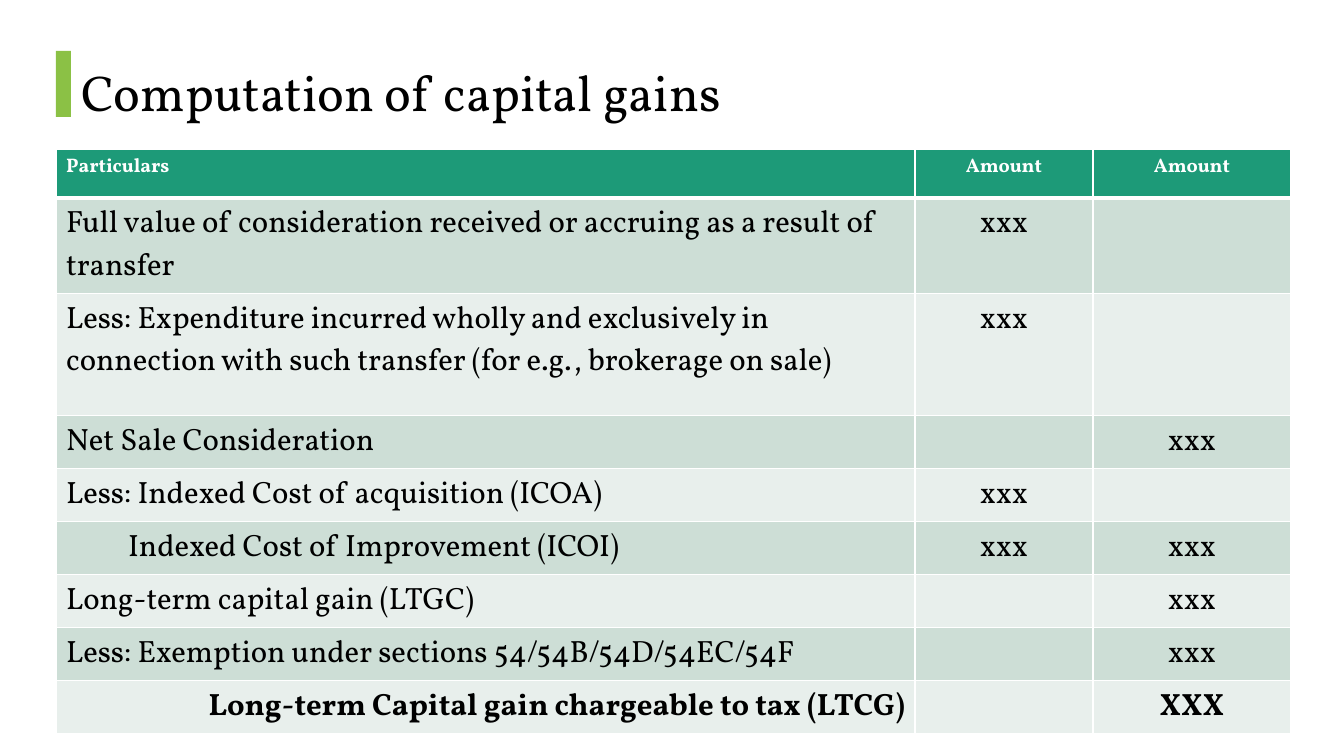
from lxml.etree import SubElement
from pptx import Presentation
from pptx.dml.color import RGBColor
from pptx.enum.shapes import MSO_SHAPE
from pptx.enum.text import MSO_ANCHOR, PP_ALIGN
from pptx.oxml.ns import qn
from pptx.util import Pt

TITLE = "Computation of capital gains"
ROWS = [
    ("Particulars", "Amount", "Amount"),
    ("Full value of consideration received or accruing as a result of transfer", "xxx", ""),
    ("Less: Expenditure incurred wholly and exclusively in connection with such "
     "transfer (for e.g., brokerage on sale)", "xxx", ""),
    ("Net Sale Consideration", "", "xxx"),
    ("Less: Indexed Cost of acquisition (ICOA)", "xxx", ""),
    ("Indexed Cost of Improvement (ICOI)", "xxx", "xxx"),
    ("Long-term capital gain (LTGC)", "", "xxx"),
    ("Less: Exemption under sections 54/54B/54D/54EC/54F", "", "xxx"),
    ("Long-term Capital gain chargeable to tax (LTCG)", "", "XXX"),
]
HEADER, INDENTED, TOTAL = 0, 5, len(ROWS) - 1
COL_WIDTHS = (859, 178, 198)
ROW_HEIGHTS = (49, 86, 122) + (49,) * 6
HEADER_FILL, BANDS = "1D9A78", ("E8EFEC", "CDDED6")
FONT = "Vollkorn"


def px(n):
    return round(n * 914400 / 100.8)


def rgb(value):
    return RGBColor.from_string(value)


def write(tf, text, size, color="000000", bold=False, align=PP_ALIGN.LEFT):
    p = tf.paragraphs[0]
    p.alignment = align
    r = p.add_run()
    r.text = text
    r.font.name, r.font.size, r.font.bold = FONT, Pt(size), bold
    r.font.color.rgb = rgb(color)
    return p


def add_borders(cell, bottom):
    """Draw white cell borders; only the bottom width varies."""
    tc_pr = cell._tc.get_or_add_tcPr()
    for side, width in (("L", 1), ("R", 1), ("T", 1), ("B", bottom)):
        ln = SubElement(tc_pr, qn(f"a:ln{side}"), w=str(Pt(width)))
        SubElement(SubElement(ln, qn("a:solidFill")), qn("a:srgbClr"), val="FFFFFF")


prs = Presentation()
prs.slide_width, prs.slide_height = px(1344), px(756)
s = prs.slides.add_slide(prs.slide_layouts[5])

title = s.shapes.title
title.left, title.top, title.width, title.height = px(71), px(22), px(1203), px(147)
title.text_frame.vertical_anchor = MSO_ANCHOR.MIDDLE
write(title.text_frame, TITLE, 36).line_spacing = 0.9

accent = s.shapes.add_shape(MSO_SHAPE.RECTANGLE, px(56), px(51), px(15), px(66))
accent.shadow.inherit = False
accent.fill.solid()
accent.fill.fore_color.rgb = rgb("8BC145")
accent.line.fill.background()

table = s.shapes.add_table(len(ROWS), len(COL_WIDTHS), px(56), px(149),
                           px(sum(COL_WIDTHS)), px(sum(ROW_HEIGHTS))).table
for column, width in zip(table.columns, COL_WIDTHS):
    column.width = px(width)
for i, (row, height, texts) in enumerate(zip(table.rows, ROW_HEIGHTS, ROWS)):
    row.height = px(height)
    header = i == HEADER
    for j, (cell, text) in enumerate(zip(row.cells, texts)):
        add_borders(cell, 3 if header else 1)
        cell.fill.solid()
        cell.fill.fore_color.rgb = rgb(HEADER_FILL if header else BANDS[i % 2])
        if not text:
            continue
        align = PP_ALIGN.CENTER if j else PP_ALIGN.RIGHT if i == TOTAL else PP_ALIGN.LEFT
        p = write(cell.text_frame, text, 14 if header else 22,
                  color="FFFFFF" if header else "000000",
                  bold=i in (HEADER, TOTAL), align=align)
        if i == INDENTED and j == 0:
            p._p.get_or_add_pPr().set("marL", str(px(62)))

prs.save("out.pptx")
